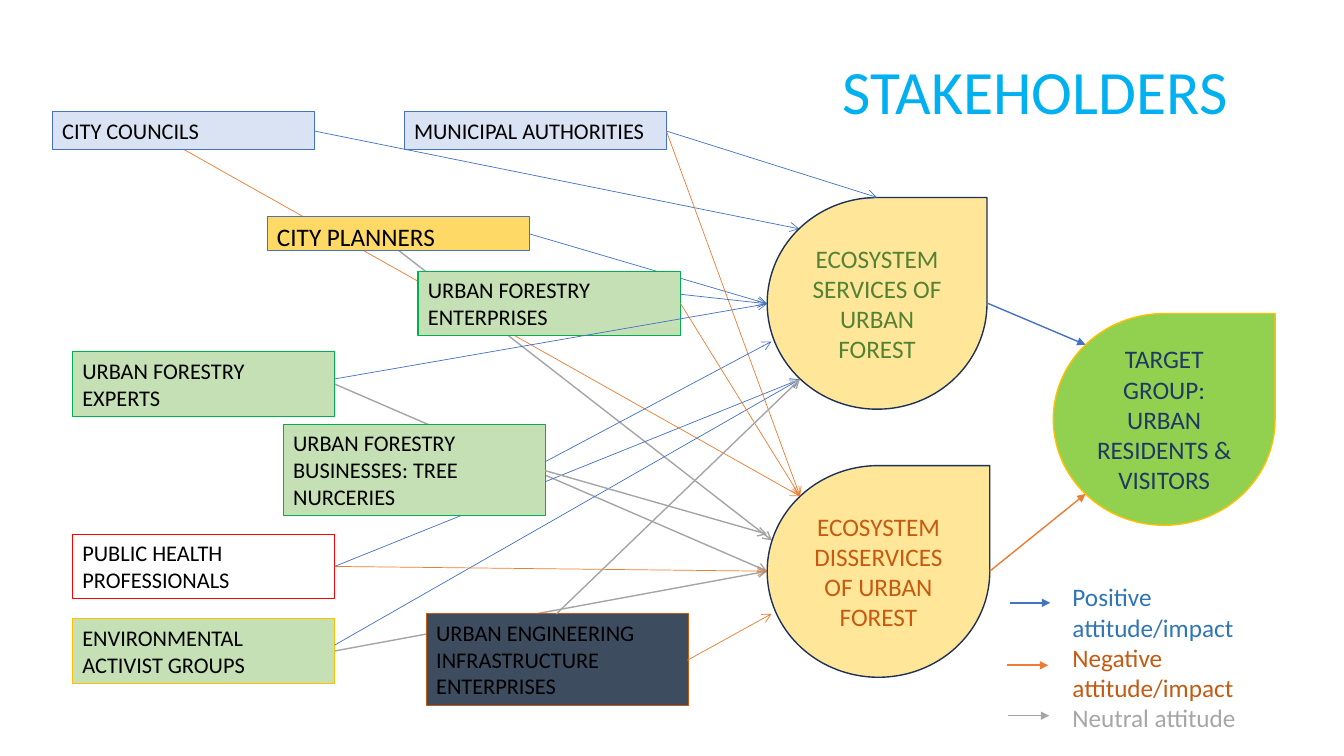
import pptx
import pptx.dml.color
import pptx.enum.shapes
import pptx.enum.text
import pptx.oxml
import pptx.oxml.ns
import pptx.util

Pt = pptx.util.Pt
SHAPES = pptx.enum.shapes.MSO_SHAPE
ALIGN = pptx.enum.text.PP_ALIGN
ANCHOR = pptx.enum.text.MSO_ANCHOR

POSITIVE, NEGATIVE, NEUTRAL = "4472C4", "ED7D31", "A5A5A5"
GREEN_BOX, BLUE_BOX = "C5E0B4", "DAE3F3"
BOX_WIDTH = 187.2

# Points where several arrows arrive
SERVICES_LEFT, SERVICES_BELOW = (548, 217), (571.3, 271)
DISSERVICES_LEFT, DISSERVICES_ABOVE = (548, 408), (571.5, 354.5)


def color(hex_code):
    return pptx.dml.color.RGBColor.from_string(hex_code)


class StakeholderMap:
    font = "Calibri"

    def __init__(self, slide):
        self.slide = slide

    def add_text(self, frame, lines, size, align=ALIGN.LEFT, anchor=ANCHOR.TOP):
        """Fill a text frame with one paragraph per (text, hex colour) pair."""
        frame.word_wrap = True
        frame.auto_size = pptx.enum.text.MSO_AUTO_SIZE.NONE
        frame.vertical_anchor = anchor
        for index, (text, hex_code) in enumerate(lines):
            paragraph = frame.add_paragraph() if index else frame.paragraphs[0]
            paragraph.alignment = align
            run = paragraph.add_run()
            run.text = text
            run.font.name = self.font
            run.font.size = Pt(size)
            run.font.color.rgb = color(hex_code)

    def title(self, text, left, top, width, height):
        heading = self.slide.shapes.title
        heading.left, heading.top = Pt(left), Pt(top)
        heading.width, heading.height = Pt(width), Pt(height)
        self.add_text(heading.text_frame, [(text, "00B0F0")], 44, ALIGN.RIGHT, ANCHOR.MIDDLE)
        heading.text_frame.paragraphs[0].line_spacing = 0.9

    def panel(self, kind, left, top, width, height, fill, outline, weight):
        """Add a filled, outlined preset shape without shadow."""
        panel = self.slide.shapes.add_shape(kind, Pt(left), Pt(top), Pt(width), Pt(height))
        panel.shadow.inherit = False
        if fill:
            panel.fill.solid()
            panel.fill.fore_color.rgb = color(fill)
        else:
            panel.fill.background()
        panel.line.color.rgb = color(outline)
        panel.line.width = Pt(weight)
        return panel

    def stakeholder(self, text, left, top, height, fill, outline, size=16):
        box = self.panel(SHAPES.RECTANGLE, left, top, BOX_WIDTH, height, fill, outline, 0.75)
        self.add_text(box.text_frame, [(text, "000000")], size)

    def drop(self, text, left, top, width, fill, outline, ink):
        drop = self.panel(SHAPES.TEAR, left, top, width, 151.2, fill, outline, 1)
        self.add_text(drop.text_frame, [(text, ink)], 18, ALIGN.CENTER, ANCHOR.MIDDLE)

    def legend(self, entries, left, top, width, height):
        box = self.slide.shapes.add_textbox(Pt(left), Pt(top), Pt(width), Pt(height))
        self.add_text(box.text_frame, entries, 18)

    def arrow(self, start, end, hex_code, weight=None, head="arrow"):
        """Draw an arrow; neutral ones are heavier unless a weight is given."""
        arrow = self.slide.shapes.add_connector(
            pptx.enum.shapes.MSO_CONNECTOR.STRAIGHT, *(Pt(value) for value in (*start, *end)))
        arrow.line.color.rgb = color(hex_code)
        arrow.line.width = Pt(weight or (1 if hex_code == NEUTRAL else 0.5))
        namespace = pptx.oxml.ns.nsdecls("a")
        properties = arrow.element.spPr
        properties.get_or_add_ln().append(
            pptx.oxml.parse_xml(f'<a:tailEnd {namespace} type="{head}"/>'))
        properties.append(pptx.oxml.parse_xml(f"<a:effectLst {namespace}/>"))


ARROWS_BEHIND = [
    ((239, 274.3), DISSERVICES_LEFT, NEUTRAL),
    ((378, 167), SERVICES_LEFT, POSITIVE),
    ((284.4, 178.6), (551.5, 386), NEUTRAL),
    ((239, 465), DISSERVICES_LEFT, NEUTRAL),
    ((239, 404.6), SERVICES_BELOW, POSITIVE),
    ((224.6, 93.6), (571, 163.5), POSITIVE),
    ((131, 106.6), DISSERVICES_ABOVE, NEGATIVE),
]

STAKEHOLDERS = [
    ("CITY COUNCILS", 37.4, 80, 26.6, BLUE_BOX, POSITIVE),
    ("MUNICIPAL AUTHORITIES", 288.7, 80, 26.6, BLUE_BOX, POSITIVE),
    ("URBAN FORESTRY ENTERPRISES", 298.6, 193.7, 46, GREEN_BOX, "00B050"),
    ("URBAN FORESTRY EXPERTS", 51.8, 251.3, 46, GREEN_BOX, "00B050"),
    ("URBAN FORESTRY BUSINESSES: TREE NURCERIES", 202.3, 303, 65.5, GREEN_BOX, "00B050"),
    ("ENVIRONMENTAL ACTIVIST GROUPS", 51.8, 442, 46, GREEN_BOX, "FFC000"),
    ("CITY PLANNERS", 190.8, 154.8, 24.2, "FFD966", POSITIVE, 18),
    ("PUBLIC HEALTH PROFESSIONALS", 51.8, 381.6, 46, None, "FF0000"),
    ("URBAN ENGINEERING INFRASTRUCTURE ENTERPRISES", 304.5, 438.5, 65.5, "3D4C5F", "C55A11"),
]

ARROWS_IN_FRONT = [
    ((476, 93.6), DISSERVICES_ABOVE, NEGATIVE),
    ((476, 93.6), (626.4, 141), POSITIVE),
    ((486, 210.2), SERVICES_LEFT, POSITIVE),
    ((239, 270.7), SERVICES_LEFT, POSITIVE),
    ((389.5, 329.8), (551, 244), POSITIVE),
    ((239, 460.8), SERVICES_BELOW, POSITIVE),
    ((491, 471.6), (551, 438.5), NEGATIVE),
    ((239, 404.6), DISSERVICES_LEFT, NEGATIVE),
    ((486, 216.7), DISSERVICES_ABOVE, NEGATIVE),
    ((389.5, 336.2), (548, 381.6), NEUTRAL),
    ((397.4, 438.5), SERVICES_BELOW, NEUTRAL),
]

IMPACT_ARROWS = [
    ((705.6, 216.7), (775.4, 246.2), POSITIVE, 1),
    ((707, 408), (775.4, 352.8), NEGATIVE, 1),
]

LEGEND_ARROWS = [
    ((721.4, 430.6), (750.2, 430.6), POSITIVE, 1),
    ((719.3, 475.2), (748.8, 475.2), NEGATIVE, 1.5),
    ((720, 511.2), (749.5, 511.2), NEUTRAL, 1),
]

DROPS = [
    ("TARGET GROUP: URBAN RESIDENTS & VISITORS", 752.4, 224, 158.4,
     "92D050", "FFC000", "203864"),
    ("ECOSYSTEM SERVICES OF URBAN FOREST", 548, 141.1, 157,
     "FFE699", "1E3256", "548235"),
    ("ECOSYSTEM DISSERVICES OF URBAN FOREST", 548, 332.6, 159,
     "FFE699", "1E3256", "C55A11"),
]

LEGEND = [
    ("Positive attitude/impact", "2E75B6"),
    ("Negative attitude/impact", "C55A11"),
    ("Neutral attitude", "A6A6A6"),
]


def main():
    deck = pptx.Presentation()
    deck.slide_width, deck.slide_height = Pt(960), Pt(540)
    stakeholder_map = StakeholderMap(deck.slides.add_slide(deck.slide_layouts[5]))
    for link in ARROWS_BEHIND:
        stakeholder_map.arrow(*link)
    stakeholder_map.title("STAKEHOLDERS", 565.2, 15, 319, 104.4)
    for drop in DROPS:
        stakeholder_map.drop(*drop)
    stakeholder_map.legend(LEGEND, 759, 412, 185, 116.6)
    for link in IMPACT_ARROWS + LEGEND_ARROWS:
        stakeholder_map.arrow(*link, head="triangle")
    for stakeholder in STAKEHOLDERS:
        stakeholder_map.stakeholder(*stakeholder)
    for link in ARROWS_IN_FRONT:
        stakeholder_map.arrow(*link)
    deck.save("out.pptx")


if __name__ == "__main__":
    main()
